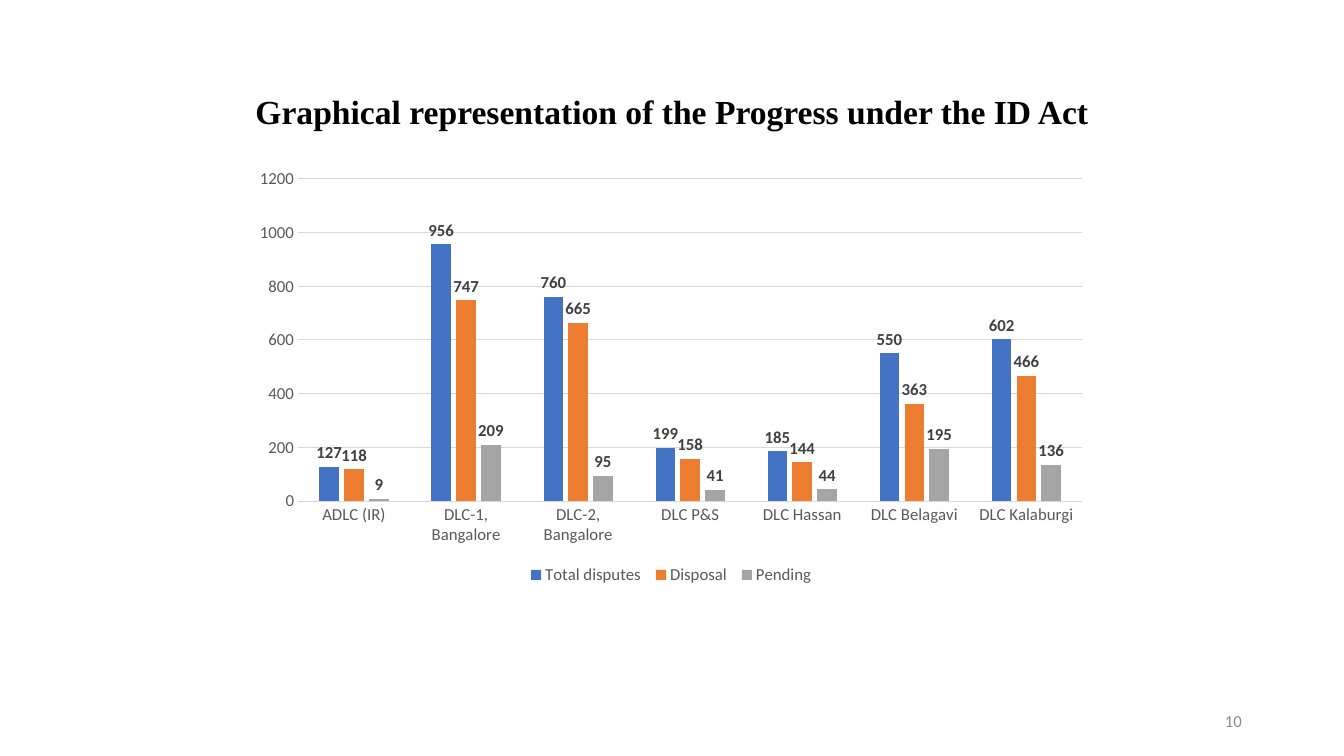
import pptx
import pptx.chart.data
import pptx.dml.color
import pptx.enum.chart
import pptx.enum.text
import pptx.util
from dataclasses import dataclass

Cm = pptx.util.Cm
Pt = pptx.util.Pt
ALIGN = pptx.enum.text.PP_ALIGN
MIDDLE = pptx.enum.text.MSO_ANCHOR.MIDDLE


@dataclass(frozen=True)
class Theme:
    title_font: str = "Times New Roman"
    body_font: str = "Calibri"
    title_size: float = 24
    body_size: float = 12
    title: str = "000000"
    axis: str = "595959"
    label: str = "404040"
    grid: str = "D9D9D9"
    number: str = "8C8C8C"
    series: tuple = ("4472C4", "ED7D31", "A5A5A5")


def rgb(color):
    return pptx.dml.color.RGBColor.from_string(color)


class SlideBuilder:
    def __init__(self, prs, theme):
        self.theme = theme
        self.s = prs.slides.add_slide(prs.slide_layouts[5])

    def style_font(self, font, name, size, color, bold=False):
        font.name, font.size, font.bold = name, Pt(size), bold
        font.color.rgb = rgb(color)

    def fill_text(self, sp, text, align, *style):
        tf = sp.text_frame
        tf.text = text
        tf.word_wrap = True
        tf.auto_size = pptx.enum.text.MSO_AUTO_SIZE.NONE
        tf.vertical_anchor = MIDDLE
        p = tf.paragraphs[0]
        p.alignment = align
        self.style_font(p.runs[0].font, *style)

    def title(self, text, left, top, width, height):
        sp = self.s.shapes.title
        sp.left, sp.top, sp.width, sp.height = map(Cm, (left, top, width, height))
        t = self.theme
        self.fill_text(sp, text, ALIGN.CENTER, t.title_font, t.title_size, t.title, True)
        sp.text_frame.paragraphs[0].line_spacing = 0.9

    def page_number(self, text, *box):
        sp = self.s.shapes.add_textbox(*map(Cm, box))
        t = self.theme
        self.fill_text(sp, text, ALIGN.RIGHT, t.body_font, t.body_size, t.number)

    def column_chart(self, categories, series, *box):
        t = self.theme
        ec = pptx.enum.chart
        data = pptx.chart.data.CategoryChartData()
        data.categories = categories
        for name, values in series.items():
            data.add_series(name, values)
        chart = self.s.shapes.add_chart(
            ec.XL_CHART_TYPE.COLUMN_CLUSTERED, *map(Cm, box), data).chart
        chart.has_title = False
        self.style_font(chart.font, t.body_font, t.body_size, t.title)

        # Legend
        chart.has_legend = True
        chart.legend.position = ec.XL_LEGEND_POSITION.BOTTOM
        chart.legend.include_in_layout = False
        self.style_font(chart.legend.font, t.body_font, t.body_size, t.axis)

        # Axes and gridlines
        for axis in (chart.category_axis, chart.value_axis):
            axis.major_tick_mark = axis.minor_tick_mark = ec.XL_TICK_MARK.NONE
            self.style_font(axis.tick_labels.font, t.body_font, t.body_size, t.axis)
        chart.value_axis.format.line.fill.background()
        chart.value_axis.has_major_gridlines = True
        for part in (chart.category_axis, chart.value_axis.major_gridlines):
            part.format.line.color.rgb = rgb(t.grid)
            part.format.line.width = Pt(0.75)

        # Columns and value labels
        plot = chart.plots[0]
        plot.gap_width, plot.overlap, plot.vary_by_categories = 219, -27, False
        for ser, color in zip(plot.series, t.series):
            ser.format.fill.solid()
            ser.format.fill.fore_color.rgb = rgb(color)
            labels = ser.data_labels
            labels.show_value = True
            labels.position = ec.XL_LABEL_POSITION.OUTSIDE_END
            self.style_font(labels.font, t.body_font, t.body_size, t.label, True)


def main():
    prs = pptx.Presentation()
    prs.slide_width, prs.slide_height = Cm(33.87), Cm(19.05)
    slide = SlideBuilder(prs, Theme())

    # Heading
    slide.title("Graphical representation of the Progress under the ID Act",
                2.33, 1.01, 29.21, 3.68)

    # Disputes by office
    offices = ["ADLC (IR)", "DLC-1, Bangalore", "DLC-2, Bangalore", "DLC P&S",
               "DLC Hassan", "DLC Belagavi", "DLC Kalaburgi"]
    disputes = {
        "Total disputes ": (127, 956, 760, 199, 185, 550, 602),
        "Disposal ": (118, 747, 665, 158, 144, 363, 466),
        "Pending": (9, 209, 95, 41, 44, 195, 136),
    }
    slide.column_chart(offices, disputes, 6.12, 4.04, 21.59, 10.8)

    # Footer
    slide.page_number("10", 23.93, 17.65, 7.62, 1.01)

    prs.save("out.pptx")


if __name__ == "__main__":
    main()
